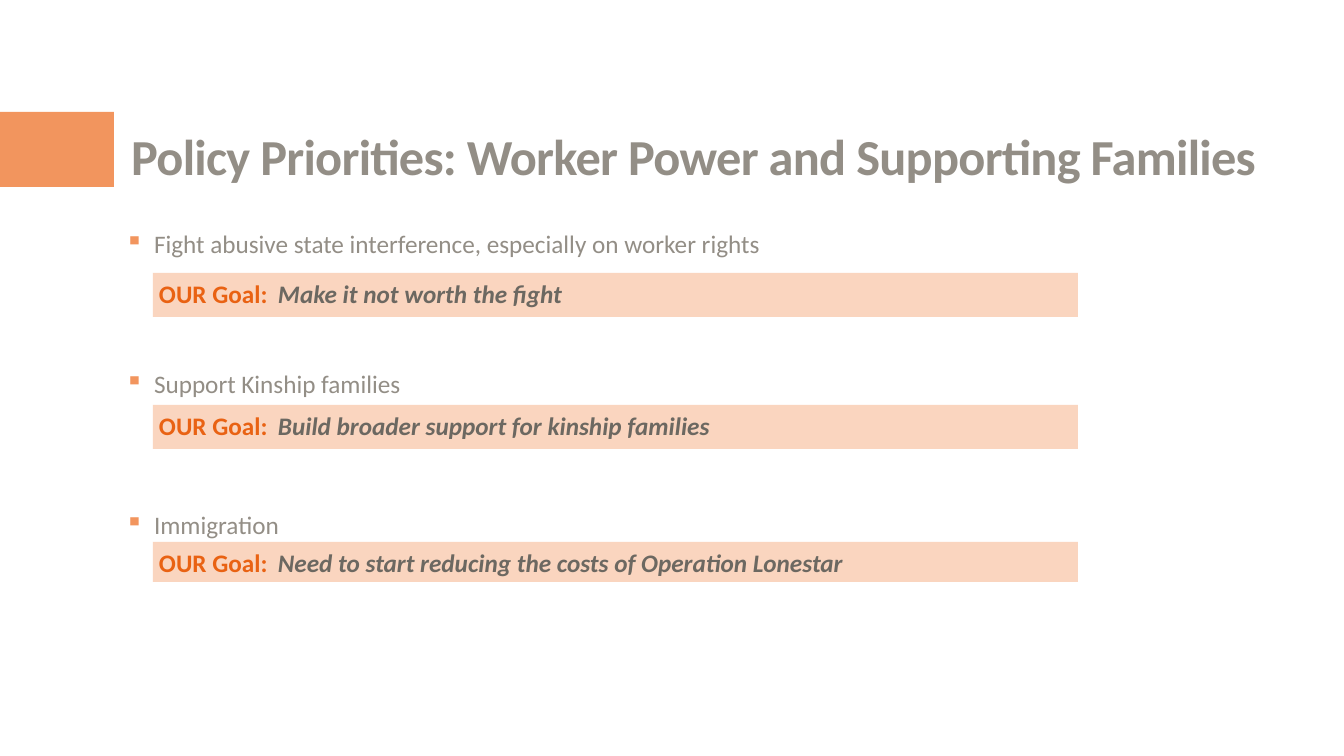
import pptx
import pptx.util
import pptx.dml.color
import pptx.enum.shapes
import pptx.enum.text
import lxml.etree

TITLE = "Policy Priorities: Worker Power and Supporting Families"
GOAL_LABEL = "OUR Goal:"
PRIORITIES = [
    {"issue": "Fight abusive state interference, especially on worker rights",
     "goal": "Make it not worth the fight", "top": 273, "height": 44},
    {"issue": "Support Kinship families",
     "goal": "Build broader support for kinship families", "top": 405, "height": 44},
    {"issue": "Immigration",
     "goal": "Need to start reducing the costs of Operation Lonestar", "top": 542, "height": 40},
]
THEME = {
    "font": "Calibri", "title_size": 36, "body_size": 18,
    "accent": "F2955E", "band": "FAD5BF", "text": "938E86",
    "label": "E96213", "goal": "6C6861",
}
ACCENT_BOX = (0, 112, 114, 75)
TITLE_BOX = (121, 31, 1165, 160)
ISSUES_BOX = (125, 223, 925, 437)
BAND_LEFT, BAND_WIDTH = 153, 925
BAND_INSET, GOAL_TAB, BULLET_INDENT = 6, 119, 29
ISSUE_GAP, SPACE_AFTER = 77, 2


def px(length):
    return pptx.util.Emu(round(length * 914400 / 100.8))


def color(name):
    return pptx.dml.color.RGBColor.from_string(THEME[name])


def apply(target, values):
    for name, value in values.items():
        setattr(target, name, value)


def add_run(paragraph, text, color_name, size="body_size", **style):
    run = paragraph.add_run()
    run.text = text
    apply(run.font, {"name": THEME["font"], "size": pptx.util.Pt(THEME[size]), **style})
    run.font.color.rgb = color(color_name)
    return run


def add_property(paragraph, tag, **attributes):
    properties = paragraph._p.get_or_add_pPr()
    namespace = properties.nsmap["a"]
    element = lxml.etree.SubElement(properties, f"{{{namespace}}}{tag}")
    for name, value in attributes.items():
        element.set(name, str(value))
    return element


def add_rectangle(slide, box, fill):
    shape = slide.shapes.add_shape(
        pptx.enum.shapes.MSO_SHAPE.RECTANGLE, *map(px, box))
    shape.shadow.inherit = False
    shape.fill.solid()
    shape.fill.fore_color.rgb = color(fill)
    shape.line.fill.background()
    return shape


def format_frame(frame, left=0):
    apply(frame, {
        "word_wrap": True, "vertical_anchor": pptx.enum.text.MSO_ANCHOR.TOP,
        "margin_left": px(left), "margin_right": 0,
        "margin_top": px(5), "margin_bottom": px(5),
    })


def format_title(title):
    apply(title, dict(zip(("left", "top", "width", "height"), map(px, TITLE_BOX))))
    apply(title.text_frame, {
        "word_wrap": True, "auto_size": pptx.enum.text.MSO_AUTO_SIZE.NONE,
        "vertical_anchor": pptx.enum.text.MSO_ANCHOR.BOTTOM,
    })
    paragraph = title.text_frame.paragraphs[0]
    apply(paragraph, {"alignment": pptx.enum.text.PP_ALIGN.LEFT, "line_spacing": 0.9})
    run = add_run(paragraph, TITLE, "text", "title_size", bold=True)
    run.font._element.set("spc", "-50")


def add_issues(slide):
    frame = slide.shapes.add_textbox(*map(px, ISSUES_BOX)).text_frame
    format_frame(frame)
    for index, priority in enumerate(PRIORITIES):
        paragraph = frame.add_paragraph() if index else frame.paragraphs[0]
        properties = paragraph._p.get_or_add_pPr()
        properties.set("marL", str(px(BULLET_INDENT)))
        properties.set("indent", str(-px(BULLET_INDENT)))
        bullet_color = add_property(paragraph, "buClr")
        lxml.etree.SubElement(
            bullet_color, bullet_color.tag.replace("buClr", "srgbClr")).set("val", THEME["accent"])
        add_property(paragraph, "buChar", char="▪")
        paragraph.space_after = pptx.util.Pt(SPACE_AFTER)
        if index:
            paragraph.space_before = pptx.util.Pt(ISSUE_GAP)
        add_run(paragraph, priority["issue"], "text")


def add_goal(slide, priority):
    box = (BAND_LEFT, priority["top"], BAND_WIDTH, priority["height"])
    frame = add_rectangle(slide, box, "band").text_frame
    format_frame(frame, BAND_INSET)
    paragraph = frame.paragraphs[0]
    tabs = add_property(paragraph, "tabLst")
    tab = lxml.etree.SubElement(tabs, tabs.tag.replace("tabLst", "tab"))
    tab.set("pos", str(px(GOAL_TAB)))
    tab.set("algn", "l")
    apply(paragraph, {"alignment": pptx.enum.text.PP_ALIGN.LEFT,
                      "space_after": pptx.util.Pt(SPACE_AFTER)})
    add_run(paragraph, GOAL_LABEL + "\t", "label", bold=True)
    add_run(paragraph, priority["goal"], "goal", bold=True, italic=True)


def main():
    presentation = pptx.Presentation()
    apply(presentation, {"slide_width": px(1344), "slide_height": px(756)})
    slide = presentation.slides.add_slide(presentation.slide_layouts[5])
    add_rectangle(slide, ACCENT_BOX, "accent")
    add_issues(slide)
    format_title(slide.shapes.title)
    for priority in PRIORITIES:
        add_goal(slide, priority)
    presentation.save("out.pptx")


if __name__ == "__main__":
    main()
